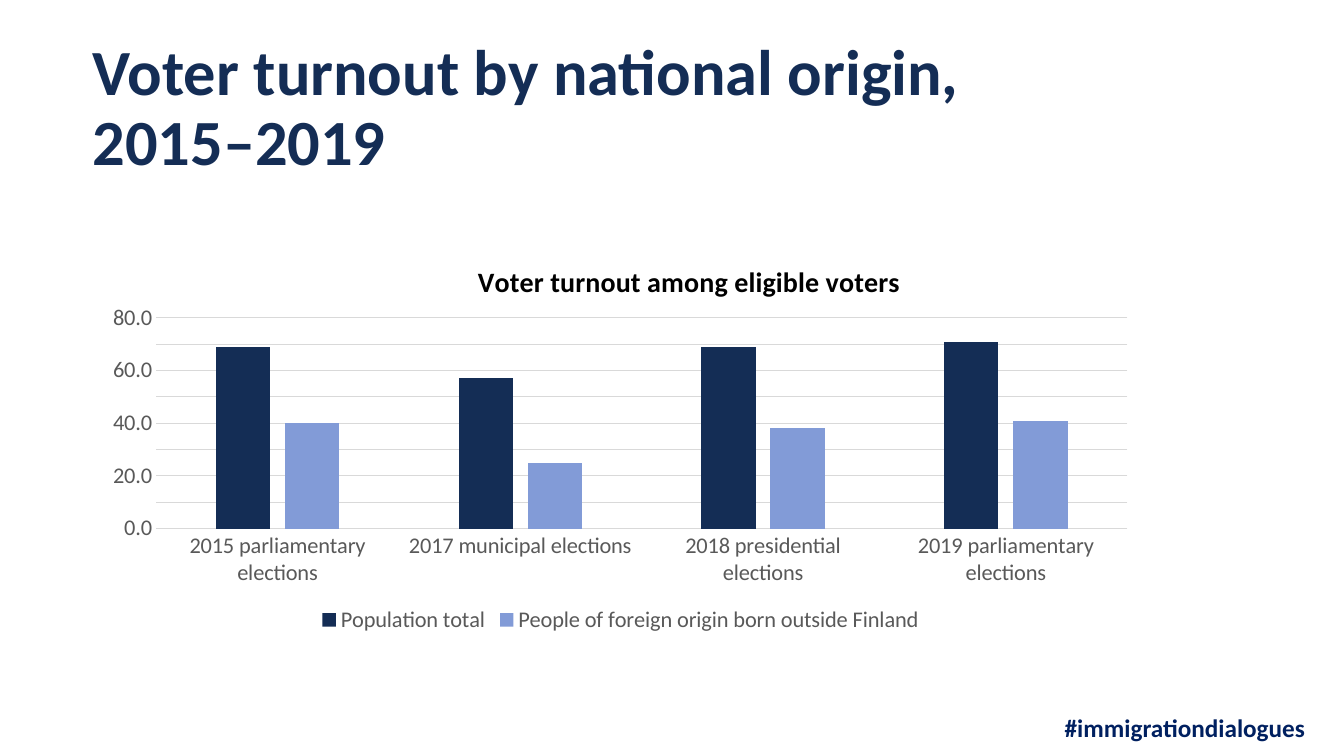
"""Build the slide on voter turnout by national origin."""
from lxml import etree
from pptx import Presentation
from pptx.chart.data import CategoryChartData
from pptx.dml.color import RGBColor
from pptx.enum.chart import XL_CHART_TYPE, XL_LEGEND_POSITION, XL_TICK_MARK
from pptx.enum.text import MSO_ANCHOR
from pptx.oxml.ns import qn
from pptx.util import Inches, Pt

TEXTS = [
    {"text": "#immigrationdialogues", "box": (10.56, 7.04, 2.63, 0.23),
     "style": "tag", "spacing": 1.1, "anchor": MSO_ANCHOR.TOP},
    {"text": "Voter turnout by national origin,\v2015–2019", "box": (0.92, 0.42, 10.47, 1.36),
     "style": "title", "spacing": 0.9, "anchor": MSO_ANCHOR.BOTTOM},
]
CHART_BOX = (0.92, 2.31, 10.47, 4.02)
CHART_TITLE = "Voter turnout among eligible voters"
CATEGORIES = ["2015 parliamentary elections", "2017 municipal elections",
              "2018 presidential elections", "2019 parliamentary elections"]
SERIES = [
    ("Population total", (69, 57, 69, 71), "142D55"),
    ("People of foreign origin born outside Finland", (40, 25, 38, 41), "829BD7"),
]
TITLE_LAYOUT = {"xMode": "edge", "yMode": "edge", "x": 0.36, "y": 0.06}
PLOT_LAYOUT = {"layoutTarget": "inner", "xMode": "edge", "yMode": "edge",
               "x": 0.06, "y": 0.21, "w": 0.92, "h": 0.52}
THEME = {
    "font": "Calibri",
    "grid": "D9D9D9",
    "tag": {"size": 18, "color": "002060", "bold": True},
    "title": {"size": 46, "color": "142D55", "bold": True},
    "chart_title": {"size": 20, "color": "000000", "bold": True},
    "label": {"size": 16, "color": "595959", "bold": False},
}


def set_attrs(obj, **values):
    for name, value in values.items():
        setattr(obj, name, value)


def style_font(font, style):
    fmt = THEME[style]
    set_attrs(font, name=THEME["font"], size=Pt(fmt["size"]), bold=fmt["bold"])
    font.color.rgb = RGBColor.from_string(fmt["color"])


def style_line(line):
    line.color.rgb = RGBColor.from_string(THEME["grid"])
    line.width = Pt(0.75)


def set_layout(parent, before, values):
    for old in parent.findall(qn("c:layout")):
        parent.remove(old)
    layout = etree.Element(qn("c:layout"))
    manual = etree.SubElement(layout, qn("c:manualLayout"))
    for tag, value in values.items():
        etree.SubElement(manual, qn(f"c:{tag}")).set("val", str(value))
    parent.insert(before, layout)


def add_text(slide, item):
    sp = slide.shapes.add_textbox(*map(Inches, item["box"]))
    tf = sp.text_frame
    set_attrs(tf, word_wrap=True, vertical_anchor=item["anchor"], margin_left=0,
              margin_right=0, margin_top=0, margin_bottom=0)
    p = tf.paragraphs[0]
    set_attrs(p, text=item["text"], line_spacing=item["spacing"])
    for r in p.runs:
        style_font(r.font, item["style"])


def add_turnout_chart(slide):
    data = CategoryChartData(number_format="0.0")
    data.categories = CATEGORIES
    for name, values, _ in SERIES:
        data.add_series(name, values)
    chart = slide.shapes.add_chart(
        XL_CHART_TYPE.COLUMN_CLUSTERED, *map(Inches, CHART_BOX), data).chart
    style_font(chart.font, "label")

    title = chart.chart_title
    p = title.text_frame.paragraphs[0]
    p.text = CHART_TITLE
    style_font(p.runs[0].font, "chart_title")
    set_layout(title._element, 1, TITLE_LAYOUT)

    plot = chart.plots[0]
    set_attrs(plot, gap_width=219, overlap=-27, vary_by_categories=False)
    set_layout(chart._chartSpace.chart.plotArea, 0, PLOT_LAYOUT)
    for series, (_, _, color) in zip(plot.series, SERIES):
        series.format.fill.solid()
        series.format.fill.fore_color.rgb = RGBColor.from_string(color)

    for axis in (chart.category_axis, chart.value_axis):
        set_attrs(axis, major_tick_mark=XL_TICK_MARK.NONE, minor_tick_mark=XL_TICK_MARK.NONE)
        style_font(axis.tick_labels.font, "label")
    style_line(chart.category_axis.format.line)
    axis = chart.value_axis
    set_attrs(axis, minimum_scale=0, maximum_scale=80, major_unit=10, has_major_gridlines=True)
    set_attrs(axis.tick_labels, number_format="0.0", number_format_is_linked=False)
    axis.format.line.fill.background()
    style_line(axis.major_gridlines.format.line)

    chart.has_legend = True
    set_attrs(chart.legend, position=XL_LEGEND_POSITION.BOTTOM, include_in_layout=False)
    style_font(chart.legend.font, "label")


def main():
    prs = Presentation()
    set_attrs(prs, slide_width=Inches(13.33), slide_height=Inches(7.5))
    slide = prs.slides.add_slide(prs.slide_layouts[6])
    for item in TEXTS:
        add_text(slide, item)
    add_turnout_chart(slide)
    prs.save("out.pptx")


if __name__ == "__main__":
    main()
